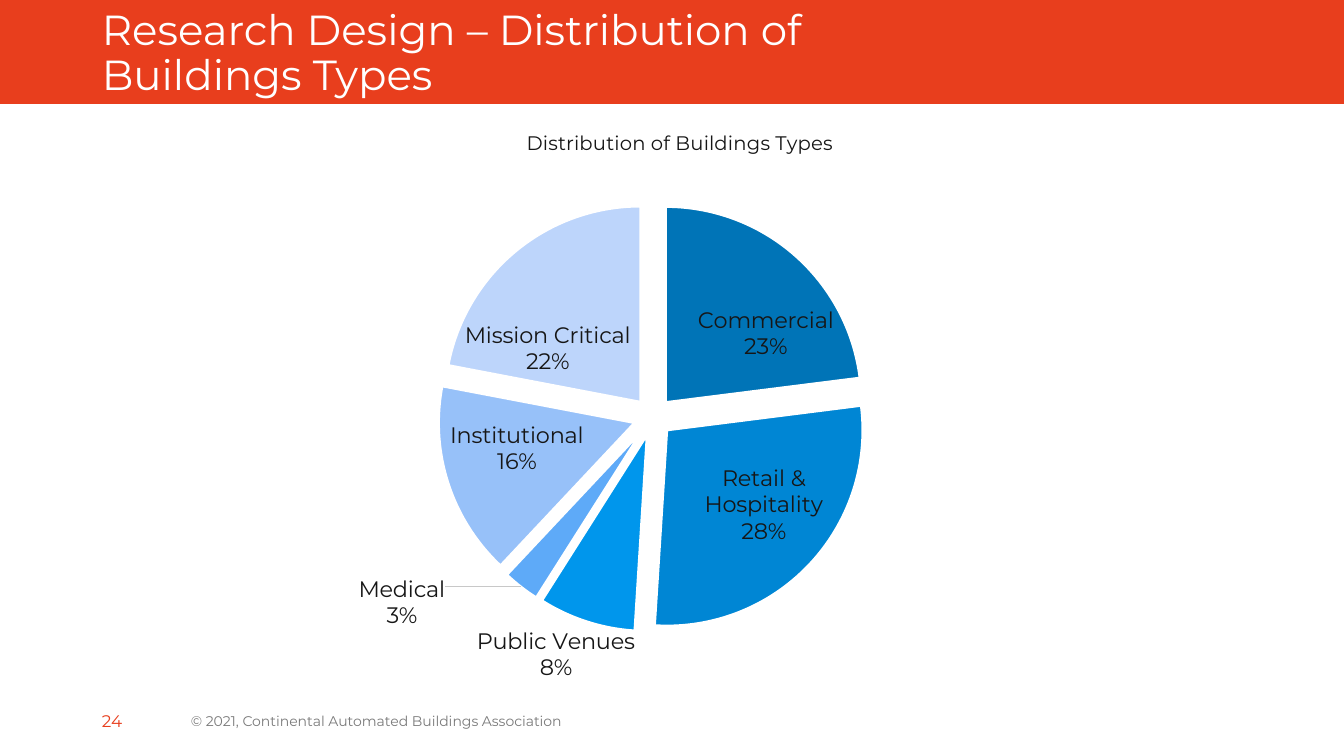
import math
from lxml import etree
from pptx import Presentation
from pptx import util as u
from pptx.chart.data import CategoryChartData
from pptx.dml.color import RGBColor
from pptx.enum import chart as ch, shapes, text
from pptx.oxml.ns import qn

PX = 914400 / 100.8
FONT = "Montserrat"
RED = RGBColor(0xE8, 0x3E, 0x1D)
WHITE = RGBColor(0xFF, 0xFF, 0xFF)
GREY = RGBColor(0x7A, 0x7A, 0x7A)
PALE = RGBColor(0xC8, 0xC8, 0xC8)
INK = RGBColor(0x16, 0x16, 0x16)

# text, box in px, size, colour, anchor
TEXTS = [
    ("Research Design – Distribution of Buildings Types", (92, 4, 758, 49),
     30, WHITE, text.MSO_ANCHOR.TOP),
    ("© 2021, Continental Automated Buildings Association",
     (181, 701, 489, 40), 10, GREY, text.MSO_ANCHOR.MIDDLE),
    ("24", (92, 701, 69, 39), 12, RED, text.MSO_ANCHOR.MIDDLE),
]
TITLE = "Distribution of Buildings Types"
# name, percent, colour, middle of the label in px
SLICES = [
    ("Commercial", 23, RGBColor(0x00, 0x74, 0xB7), (766, 334)),
    ("Retail & Hospitality", 28, RGBColor(0x00, 0x86, 0xD4), (764, 505)),
    ("Public Venues", 8, RGBColor(0x00, 0x96, 0xEC), (556, 655)),
    ("Medical", 3, RGBColor(0x5E, 0xAA, 0xF8), (402, 603)),
    ("Institutional", 16, RGBColor(0x97, 0xC1, 0xF9), (517, 449)),
    ("Mission Critical", 22, RGBColor(0xBD, 0xD5, 0xFB), (548, 349)),
]
FRAME = (9, 103, 1335, 598)
PIE = (438, 202, 430, 430)
HEAD = (523, 126)
BURST = 10  # percent of the radius


def emu(box):
    return [u.Emu(round(n * PX)) for n in box]


def style(font, size, color):
    font.name, font.size, font.color.rgb = FONT, u.Pt(size), color


def make(tag, **attrs):
    node = etree.Element(qn(tag))
    for key, val in attrs.items():
        node.set(key, str(val))
    return node


def layout(inner=False, **parts):
    """Manual layout whose parts are fractions of the chart frame."""
    node = make("c:layout")
    manual = etree.SubElement(node, qn("c:manualLayout"))
    if inner:
        manual.append(make("c:layoutTarget", val="inner"))
    if inner or parts.pop("edge", False):
        manual.append(make("c:xMode", val="edge"))
        manual.append(make("c:yMode", val="edge"))
    for key, val in parts.items():
        manual.append(make(f"c:{key}", val=round(val, 4)))
    return node


def show(node):
    """Show name and percent on two lines."""
    for key in ("LegendKey", "Val", "CatName", "SerName", "Percent"):
        flag = node.find(qn(f"c:show{key}"))
        flag.set("val", "1" if key in ("CatName", "Percent") else "0")
    line = make("c:separator")
    line.text = "\n"
    bubble = node.find(qn("c:showBubbleSize"))
    (flag if bubble is None else bubble).addnext(line)


def add_text(slide, words, box, size, color, anchor):
    frame = slide.shapes.add_textbox(*emu(box)).text_frame
    frame.word_wrap, frame.vertical_anchor = True, anchor
    para = frame.paragraphs[0]
    para.text = words
    style(para.font, size, color)
    return para


def add_pie(slide):
    data = CategoryChartData(number_format="0")
    data.categories = [row[0] for row in SLICES]
    data.add_series("Series 1", [row[1] for row in SLICES])
    chart = slide.shapes.add_chart(
        ch.XL_CHART_TYPE.PIE, *emu(FRAME), data).chart
    style(chart.font, 10, INK)
    chart.has_legend = False
    left, top, wide, high = FRAME

    chart.has_title = True
    para = chart.chart_title.text_frame.paragraphs[0]
    para.text = TITLE
    style(para.font, 14, INK)
    para.font.bold = False
    head = chart.chart_title._element
    for old in head.findall(qn("c:layout")):
        head.remove(old)
    head.find(qn("c:tx")).addnext(layout(
        edge=True, x=(HEAD[0] - left) / wide, y=(HEAD[1] - top) / high))

    area = chart._chartSpace.chart.plotArea
    for old in area.findall(qn("c:layout")):
        area.remove(old)
    x, y, w, h = PIE
    area.insert(0, layout(True, x=(x - left) / wide, y=(y - top) / high,
                          w=w / wide, h=h / high))

    plot = chart.plots[0]
    plot.vary_by_categories = True
    pie = plot.series[0]
    labels = pie.data_labels
    labels.number_format, labels.number_format_is_linked = "0%", False
    labels.position = ch.XL_LABEL_POSITION.CENTER
    style(labels.font, 16, INK)
    labels.show_percentage = labels.show_category_name = True
    group = labels._element
    show(group)
    for old in group.findall(qn("c:showLeaderLines")):
        group.remove(old)
    group.append(make("c:showLeaderLines", val=1))
    lead = etree.SubElement(group, qn("c:leaderLines"))
    props = etree.SubElement(lead, qn("c:spPr"))
    line = etree.SubElement(props, qn("a:ln"), w="9525")
    fill = etree.SubElement(line, qn("a:solidFill"))
    fill.append(make("a:srgbClr", val=PALE))

    reach = w / 2 / (1 + BURST / 100) * (0.5 + BURST / 100)
    total, done = sum(row[1] for row in SLICES), 0
    for i, (name, part, color, (lx, ly)) in enumerate(SLICES):
        point = pie.points[i]
        point.format.fill.solid()
        point.format.fill.fore_color.rgb = color
        point.format.line.color.rgb = WHITE
        point.format.line.width = u.Pt(1.5)
        label = point.data_label
        style(label.font, 16, INK)
        label.position = ch.XL_LABEL_POSITION.CENTER
        turn = math.tau * (done + part / 2) / total
        done += part
        dx = lx - (x + w / 2 + reach * math.sin(turn))
        dy = ly - (y + h / 2 - reach * math.cos(turn))
        node = group.findall(qn("c:dLbl"))[i]
        node.find(qn("c:idx")).addnext(layout(x=dx / wide, y=dy / high))
        show(node)
    ser = pie._element
    for old in ser.findall(qn("c:explosion")):
        ser.remove(old)
    ser.find(qn("c:dPt")).addprevious(make("c:explosion", val=BURST))
    for node in ser.findall(qn("c:dPt")):
        node.find(qn("c:spPr")).addprevious(make("c:explosion", val=BURST))


def main():
    deck = Presentation()
    deck.slide_width, deck.slide_height = emu((1344, 756))
    slide = deck.slides.add_slide(deck.slide_layouts[6])
    band = slide.shapes.add_shape(
        shapes.MSO_SHAPE.RECTANGLE, *emu((0, 0, 1344, 104)))
    band.shadow.inherit = False
    band.fill.solid()
    band.fill.fore_color.rgb = RED
    band.line.fill.background()
    add_pie(slide)
    paras = [add_text(slide, *row) for row in TEXTS]
    paras[0].line_spacing = 0.9
    deck.save("out.pptx")


if __name__ == "__main__":
    main()
